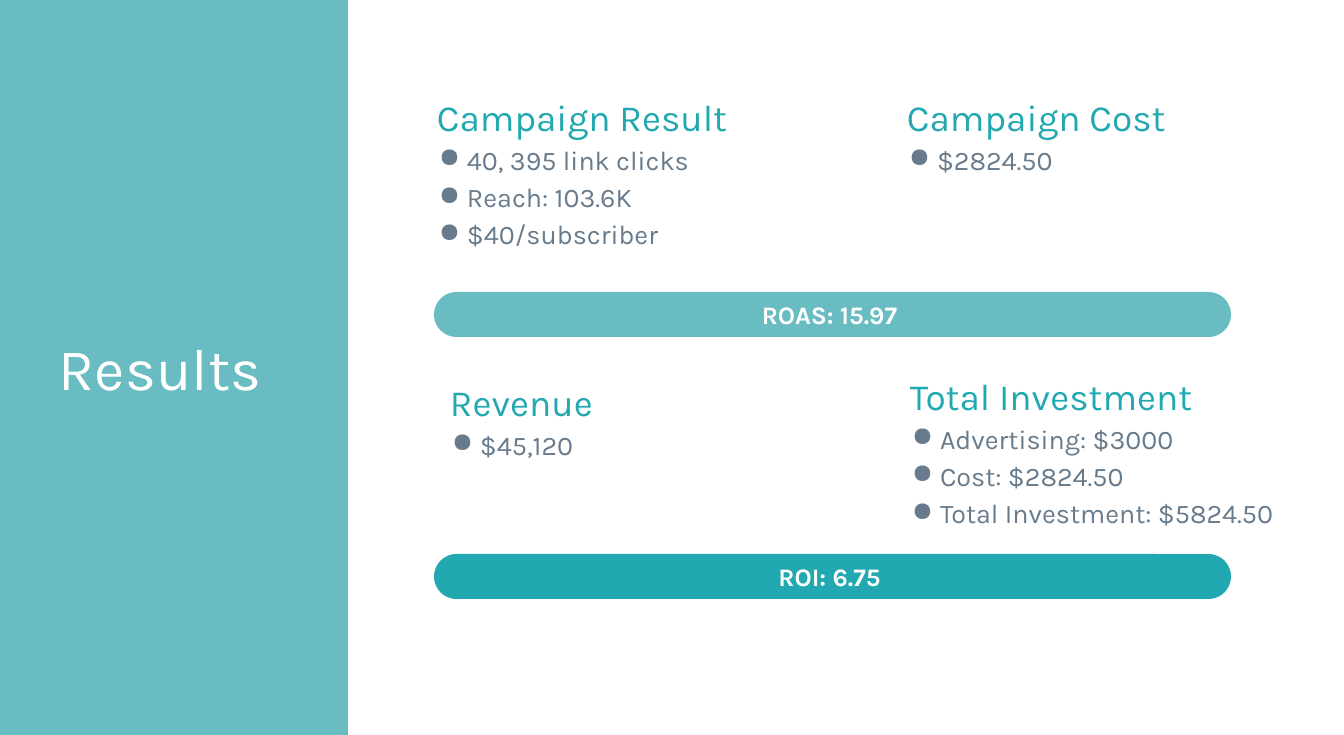
"""Build the campaign results slide."""
from lxml.etree import SubElement
from pptx import Presentation
from pptx.dml.color import RGBColor
from pptx.enum.shapes import MSO_SHAPE as Shape
from pptx.enum.text import MSO_ANCHOR as Anchor, PP_ALIGN as Align
from pptx.oxml.ns import qn
from pptx.util import Emu, Pt

PX = 914400 / 60.5
WIDE, HIGH = 1344, 735
PAD = 13
FONT = "Karla"
WHITE = RGBColor(0xFF, 0xFF, 0xFF)
AQUA = RGBColor(0x69, 0xBC, 0xC1)
TEAL = RGBColor(0x21, 0xA8, 0xB0)
SLATE = RGBColor(0x67, 0x7B, 0x8C)

BLOCKS = [
    ((424, 59, 457, 224), "Campaign Result",
     ["40, 395 link clicks", "Reach: 103.6K", "$40/subscriber"]),
    ((894, 59, 405, 169), "Campaign Cost", ["$2824.50"]),
    ((437, 344, 457, 224), "Revenue", ["$45,120"]),
    ((897, 338, 447, 224), "Total Investment",
     ["Advertising: $3000", "Cost: $2824.50", "Total Investment: $5824.50"]),
]
BARS = [(292, AQUA, "ROAS: 15.97"), (554, TEAL, "ROI: 6.75")]


def px(n):
    return Emu(round(n * PX))


def add_run(para, text, size, color, bold=False):
    run = para.add_run()
    run.text = text
    font = run.font
    font.name, font.size, font.bold = FONT, Pt(size), bold
    font.color.rgb = color


def add_form(slide, kind, area, color):
    form = slide.shapes.add_shape(kind, *map(px, area))
    form.shadow.inherit = False
    form.fill.solid()
    form.fill.fore_color.rgb = color
    form.line.fill.background()
    return form


def set_pad(frame, left, top, right, bottom):
    frame.margin_left, frame.margin_top = px(left), px(top)
    frame.margin_right, frame.margin_bottom = px(right), px(bottom)


def add_box(slide, area, anchor=Anchor.TOP):
    frame = slide.shapes.add_textbox(*map(px, area)).text_frame
    frame.word_wrap = True
    frame.vertical_anchor = anchor
    set_pad(frame, PAD, PAD, PAD, PAD)
    return frame


def add_bar(slide, top, color, text):
    bar = add_form(slide, Shape.ROUNDED_RECTANGLE, (434, top, 797, 45), color)
    bar.adjustments[0] = 0.5
    frame = bar.text_frame
    frame.vertical_anchor = Anchor.MIDDLE
    set_pad(frame, 0, 0, 6, 0)
    para = frame.paragraphs[0]
    para.alignment = Align.CENTER
    add_run(para, text, 30, WHITE, True)


def set_dot(para):
    props = para._p.get_or_add_pPr()
    props.set("marL", str(px(30)))
    props.set("indent", str(px(-28)))
    tint = SubElement(props, qn("a:buClr"))
    SubElement(tint, qn("a:srgbClr"), val=str(SLATE))
    SubElement(props, qn("a:buChar"), char="●")


def add_block(slide, area, head, items):
    frame = add_box(slide, area)
    para = frame.paragraphs[0]
    para.line_spacing = 1.5
    add_run(para, head, 44, TEAL)
    for item in items:
        para = frame.add_paragraph()
        para.line_spacing = 1.15
        set_dot(para)
        add_run(para, item, 32, SLATE)


def main():
    deck = Presentation()
    deck.slide_width, deck.slide_height = px(WIDE), px(HIGH)
    slide = deck.slides.add_slide(deck.slide_layouts[6])
    add_form(slide, Shape.RECTANGLE, (0, 0, 348, HIGH), AQUA)
    title = add_box(slide, (46, 247, 274, 240), Anchor.MIDDLE)
    add_run(title.paragraphs[0], "Results", 70, WHITE)
    for bar in BARS:
        add_bar(slide, *bar)
    for block in BLOCKS:
        add_block(slide, *block)
    deck.save("out.pptx")


if __name__ == "__main__":
    main()
